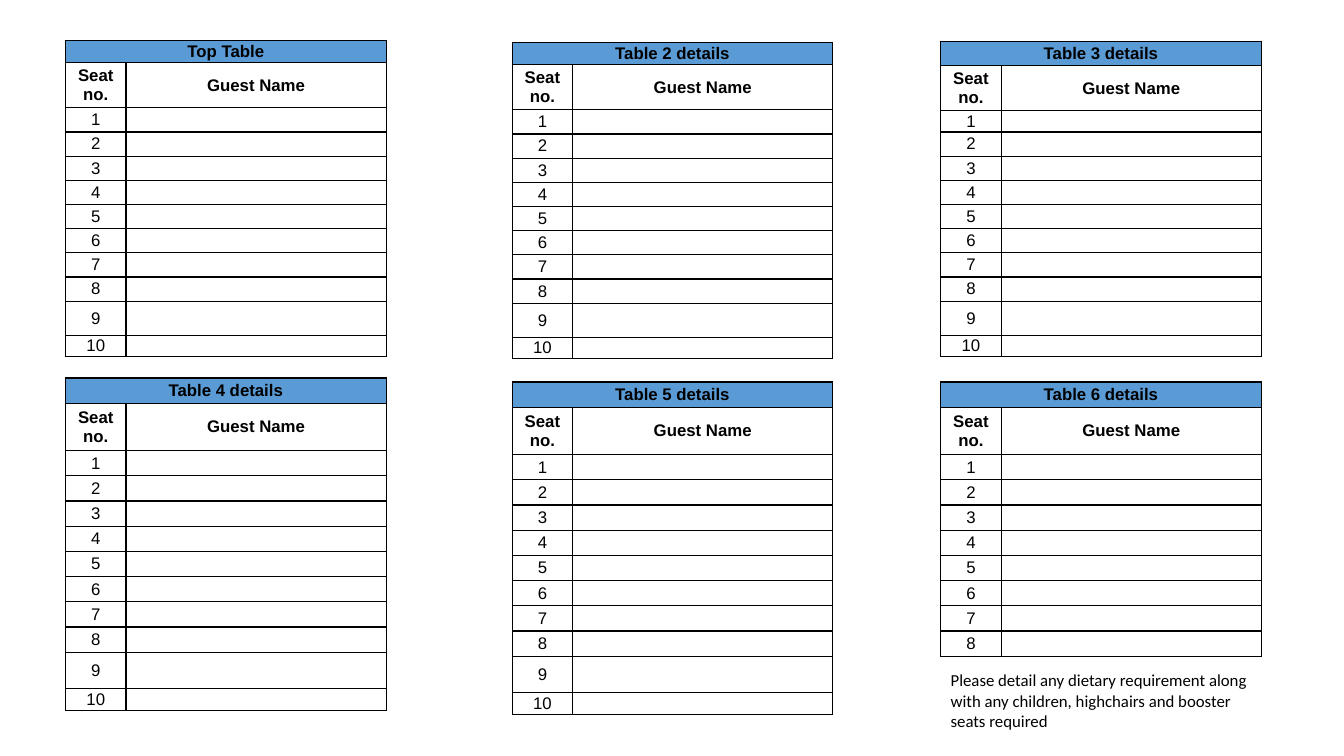
from lxml.etree import SubElement
from pptx import Presentation
from pptx.dml.color import RGBColor
from pptx.enum.text import MSO_ANCHOR, PP_ALIGN
from pptx.oxml.ns import qn
from pptx.util import Pt

PX = 9144
COLORS = {"ink": "000000", "header": "5B9BD5"}
SEAT_WIDTH, GUEST_WIDTH = 60, 258

UPPER_ROWS = [22, 45] + [24] * 8 + [34, 21]
TABLE_3_ROWS = [24, 45, 21] + [24] * 7 + [34, 21]
LOWER_ROWS = [25, 47] + [25] * 8 + [36, 22]

SEATING = [
    ("Top Table", 65, 40, UPPER_ROWS),
    ("Table 2 details", 508, 42, UPPER_ROWS),
    ("Table 3 details", 933, 41, TABLE_3_ROWS),
    ("Table 4 details", 65, 375, LOWER_ROWS),
    ("Table 5 details", 508, 379, LOWER_ROWS),
    ("Table 6 details", 933, 379, LOWER_ROWS[:10]),
]


def add_borders(cell):
    properties = cell._tc.get_or_add_tcPr()
    for position, side in enumerate(("a:lnL", "a:lnR", "a:lnT", "a:lnB")):
        line = properties.makeelement(qn(side), {"w": str(Pt(1))})
        solid = SubElement(line, qn("a:solidFill"))
        SubElement(solid, qn("a:srgbClr"), val=COLORS["ink"])
        properties.insert(position, line)


def set_font(paragraph, name, bold=False):
    paragraph.font.name = name
    paragraph.font.size = Pt(12)
    paragraph.font.bold = bold
    paragraph.font.color.rgb = RGBColor.from_string(COLORS["ink"])


presentation = Presentation()
presentation.slide_width = 1333 * PX
presentation.slide_height = 750 * PX
slide = presentation.slides.add_slide(presentation.slide_layouts[6])

for title, left, top, heights in SEATING:
    seating = slide.shapes.add_table(
        len(heights), 2, left * PX, top * PX,
        (SEAT_WIDTH + GUEST_WIDTH) * PX, sum(heights) * PX).table
    seating.first_row = False
    seating.horz_banding = False
    seating.columns[0].width = SEAT_WIDTH * PX
    seating.columns[1].width = GUEST_WIDTH * PX
    seating.cell(0, 0).merge(seating.cell(0, 1))

    entries = [(title, ""), ("Seat no.", "Guest Name")]
    entries += [(str(seat), "") for seat in range(1, len(heights) - 1)]
    for row, (height, entry) in enumerate(zip(heights, entries)):
        seating.rows[row].height = height * PX
        for column, wording in enumerate(entry):
            cell = seating.cell(row, column)
            cell.margin_left = cell.margin_right = 0
            cell.margin_top = cell.margin_bottom = 0
            cell.vertical_anchor = MSO_ANCHOR.MIDDLE
            if row == 0:
                cell.fill.solid()
                cell.fill.fore_color.rgb = RGBColor.from_string(COLORS["header"])
            else:
                cell.fill.background()
            add_borders(cell)
            paragraph = cell.text_frame.paragraphs[0]
            paragraph.alignment = PP_ALIGN.CENTER
            set_font(paragraph, "Arial", bold=row < 2)
            if wording:
                paragraph.text = wording
            else:
                SubElement(paragraph._p, qn("a:endParaRPr"), sz="1200")

dietary_note = slide.shapes.add_textbox(933 * PX, 660 * PX, 318 * PX, 94 * PX).text_frame
dietary_note.word_wrap = True
dietary_request = dietary_note.paragraphs[0]
dietary_request.text = ("Please detail any dietary requirement along with any children, "
                        "highchairs and booster seats required")
set_font(dietary_request, "Calibri")

presentation.save("out.pptx")
